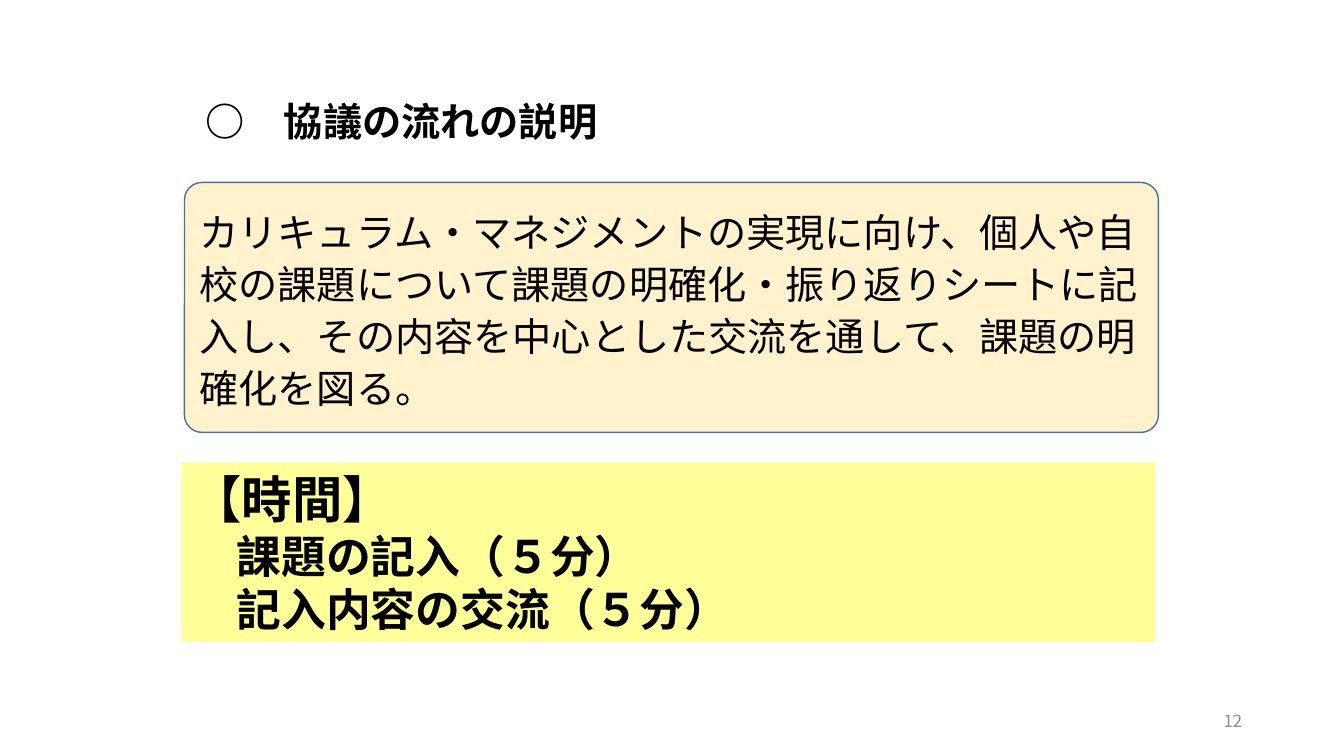
import pptx
import pptx.dml.color
import pptx.enum.shapes
import pptx.enum.text
import pptx.oxml
import pptx.oxml.ns
import pptx.util

FONT = "Noto Sans CJK JP"
WIDTH, HEIGHT = 13.33, 7.5
PANEL_WIDTH = 9.66
ANCHOR = pptx.enum.text.MSO_ANCHOR
ALIGN = pptx.enum.text.PP_ALIGN


def colour(hex_code):
    """Turn a hex string into a colour."""
    return pptx.dml.color.RGBColor.from_string(hex_code)


def box(left, top, width, height):
    """Convert a box in inches to slide lengths."""
    return [pptx.util.Inches(length) for length in (left, top, width, height)]


def place(element, bounds):
    """Move and size an element."""
    for side, length in zip(("left", "top", "width", "height"), box(*bounds)):
        setattr(element, side, length)


def write(element, lines, anchor, bold=False, ink="000000", align=ALIGN.LEFT, spacing=1.0):
    """Fill an element with unbulleted lines given as (wording, size)."""
    frame = element.text_frame
    frame_format = {"word_wrap": True, "vertical_anchor": anchor,
                    "auto_size": pptx.enum.text.MSO_AUTO_SIZE.NONE}
    for name, value in frame_format.items():
        setattr(frame, name, value)
    frame.text = "\n".join(wording for wording, _ in lines)
    for paragraph, (_, size) in zip(frame.paragraphs, lines):
        paragraph_format = {"alignment": align, "line_spacing": spacing,
                            "space_before": pptx.util.Pt(0)}
        for name, value in paragraph_format.items():
            setattr(paragraph, name, value)
        properties = paragraph._p.get_or_add_pPr()
        properties.set("marL", "0")
        properties.set("indent", "0")
        pptx.oxml.ns.qn("a:buNone")
        properties.append(pptx.oxml.parse_xml(
            f'<a:buNone {pptx.oxml.ns.nsdecls("a")}/>'))
        font = paragraph.runs[0].font
        for name, value in {"name": FONT, "size": pptx.util.Pt(size), "bold": bold}.items():
            setattr(font, name, value)
        font.color.rgb = colour(ink)
        font._element.find(pptx.oxml.ns.qn("a:latin")).addnext(pptx.oxml.parse_xml(
            f'<a:ea {pptx.oxml.ns.nsdecls("a")} typeface="{FONT}"/>'))


def paint(element, fill):
    """Give an element a solid fill."""
    element.fill.solid()
    element.fill.fore_color.rgb = colour(fill)


def add_purpose(slide, bounds, wording):
    """Add the rounded panel that states the purpose."""
    purpose = slide.shapes.add_shape(
        pptx.enum.shapes.MSO_SHAPE.ROUNDED_RECTANGLE, *box(*bounds))
    purpose.adjustments[0] = 0.07
    purpose.shadow.inherit = False
    paint(purpose, "FFF2CC")
    purpose.line.color.rgb = colour("43739E")
    purpose.line.width = pptx.util.Pt(1)
    write(purpose, [(wording, 28)], ANCHOR.MIDDLE, spacing=1.1)


def main():
    """Build the slide and save it."""
    deck = pptx.Presentation()
    deck.slide_width, deck.slide_height = pptx.util.Inches(WIDTH), pptx.util.Inches(HEIGHT)
    slide = deck.slides.add_slide(deck.slide_layouts[1])
    heading, schedule = slide.placeholders

    place(heading, (1.94, 0.79, 8.62, 0.7))
    write(heading, [("○　協議の流れの説明", 28)], ANCHOR.BOTTOM, bold=True, spacing=0.9)

    add_purpose(slide, (1.83, 1.81, PANEL_WIDTH, 2.48),
                "カリキュラム・マネジメントの実現に向け、個人や自校の課題について"
                "課題の明確化・振り返りシートに記入し、その内容を中心とした交流を通して、"
                "課題の明確化を図る。")

    place(schedule, (1.8, 4.59, PANEL_WIDTH, 1.78))
    paint(schedule, "FFFF99")
    write(schedule, [("【時間】", 36), ("　課題の記入（５分）", 32),
                     ("　記入内容の交流（５分）", 32)], ANCHOR.TOP, bold=True)

    page_number = slide.shapes.add_textbox(*box(9.42, 6.95, 3, 0.4))
    write(page_number, [("12", 12)], ANCHOR.MIDDLE, ink="8C8C8C", align=ALIGN.RIGHT)
    deck.save("out.pptx")


if __name__ == "__main__":
    main()
